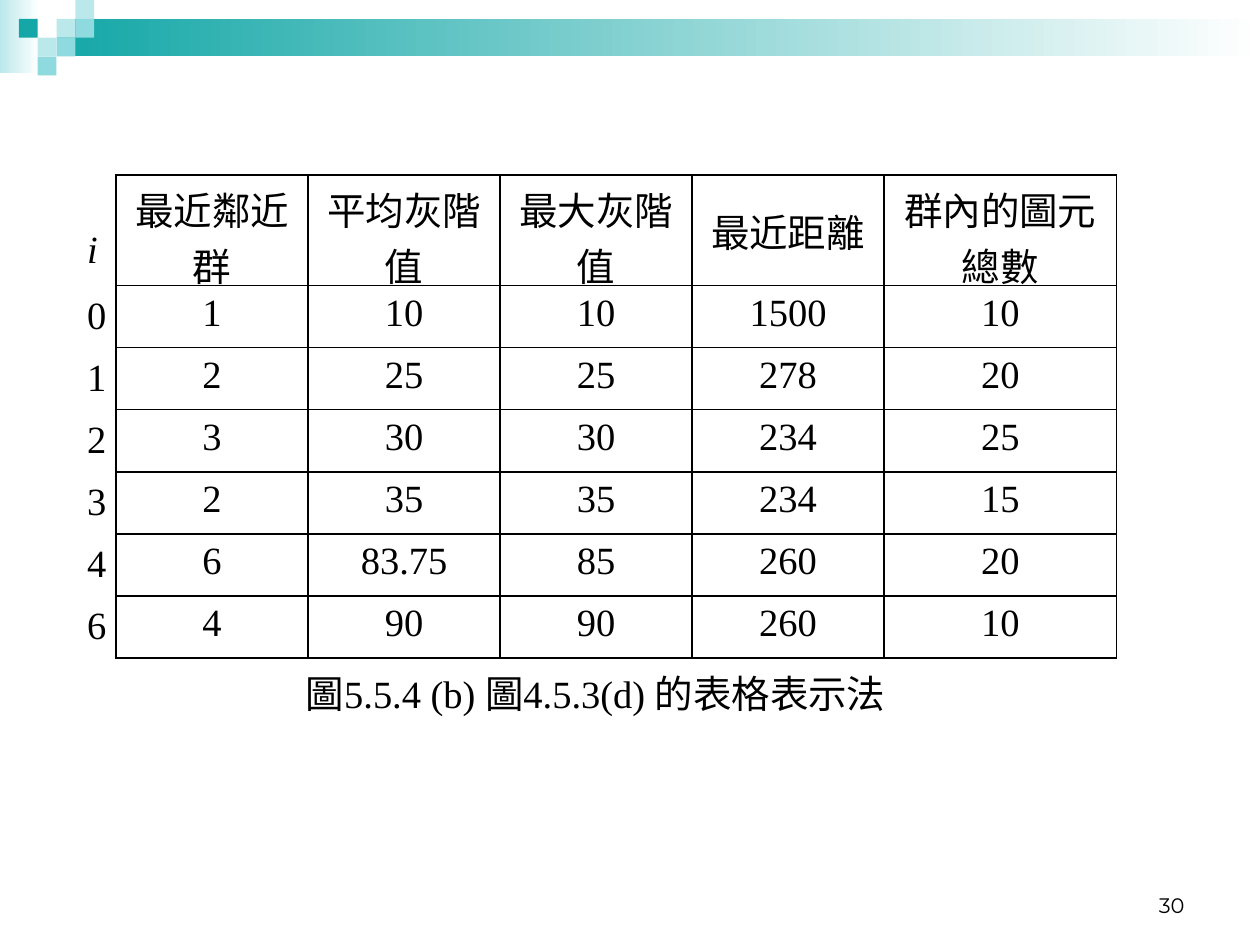
from dataclasses import dataclass

import lxml.etree
import pptx
import pptx.dml.color
import pptx.enum.shapes
import pptx.enum.text
import pptx.oxml.ns
import pptx.util

Cm = pptx.util.Cm
Pt = pptx.util.Pt
PP_ALIGN = pptx.enum.text.PP_ALIGN
ANCHOR = pptx.enum.text.MSO_ANCHOR


@dataclass(frozen=True)
class Theme:
    teal: str = "15A7A7"
    mid: str = "8EDADE"
    pale: str = "BBE8EB"
    white: str = "FFFFFF"
    ink: str = "000000"
    table_font: str = "Times New Roman"
    number_font: str = "Montserrat"
    table_size: int = 22
    number_size: int = 12
    border: float = 1


@dataclass(frozen=True)
class Band:
    left: float
    top: float
    width: float
    height: float
    start: str


@dataclass(frozen=True)
class Tile:
    col: int
    row: int
    color: str


THEME = Theme()
TILE_SIZE = 0.38
NO_GRID_STYLE = "{2D5ABB26-0587-4C30-8999-92F81FD0307C}"

BANDS = [
    Band(0, 0, 0.79, 1.47, THEME.pale),
    Band(1.14, 0.38, 24.26, 0.76, THEME.teal),
]
TILES = [
    Tile(3, 1, THEME.pale),
    Tile(4, 0, THEME.pale),
    Tile(4, 1, THEME.mid),
    Tile(2, 2, THEME.pale),
    Tile(1, 1, THEME.teal),
    Tile(3, 2, THEME.mid),
    Tile(2, 3, THEME.mid),
]

ROWS = [
    ["i", "最近鄰近群", "平均灰階值", "最大灰階值", "最近距離", "群內的圖元總數"],
    ["0", "1", "10", "10", "1500", "10"],
    ["1", "2", "25", "25", "278", "20"],
    ["2", "3", "30", "30", "234", "25"],
    ["3", "2", "35", "35", "234", "15"],
    ["4", "6", "83.75", "85", "260", "20"],
    ["6", "4", "90", "90", "260", "10"],
]
CAPTION = "圖5.5.4 (b) 圖4.5.3(d) 的表格表示法"
COL_WIDTHS = [0.84, 3.87, 3.87, 3.87, 3.87, 4.69]
HEADER_HEIGHT = 2.23
ROW_HEIGHT = 1.25


def rgb(color: str) -> pptx.dml.color.RGBColor:
    return pptx.dml.color.RGBColor.from_string(color)


def add_rect(slide, left: float, top: float, width: float, height: float):
    sp = slide.shapes.add_shape(
        pptx.enum.shapes.MSO_SHAPE.RECTANGLE, Cm(left), Cm(top), Cm(width), Cm(height)
    )
    sp.shadow.inherit = False
    sp.line.fill.background()
    return sp


def add_band(slide, band: Band) -> None:
    """Draw a bar that fades to white from left to right."""
    fill = add_rect(slide, band.left, band.top, band.width, band.height).fill
    fill.gradient()
    fill.gradient_angle = 0
    for stop, color in zip(fill.gradient_stops, (band.start, THEME.white)):
        stop.color.rgb = rgb(color)


def add_tile(slide, tile: Tile) -> None:
    left, top = tile.col * TILE_SIZE, tile.row * TILE_SIZE
    sp = add_rect(slide, left, top, TILE_SIZE, TILE_SIZE)
    sp.fill.solid()
    sp.fill.fore_color.rgb = rgb(tile.color)


def format_text(tf, font: str, size: int, align) -> None:
    for p in tf.paragraphs:
        p.alignment = align
        for r in p.runs:
            r.font.name = font
            r.font.size = Pt(size)
            r.font.color.rgb = rgb(THEME.ink)


def set_borders(tc_pr, sides: str) -> None:
    """Put lines on the given sides (letters of LRTB), ahead of the cell fill."""
    for i, side in enumerate(sides):
        ln = lxml.etree.Element(
            pptx.oxml.ns.qn(f"a:ln{side}"), w=str(Pt(THEME.border))
        )
        fill = lxml.etree.SubElement(ln, pptx.oxml.ns.qn("a:solidFill"))
        lxml.etree.SubElement(fill, pptx.oxml.ns.qn("a:srgbClr"), val=THEME.ink)
        tc_pr.insert(i, ln)


def fill_cell(cell, tc, text: str, anchor, borders: str) -> None:
    cell.text_frame.text = text
    format_text(cell.text_frame, THEME.table_font, THEME.table_size, PP_ALIGN.CENTER)
    cell.vertical_anchor = anchor
    cell.fill.background()
    set_borders(tc.find(pptx.oxml.ns.qn("a:tcPr")), borders)


def add_cluster_table(slide) -> None:
    heights = [HEADER_HEIGHT] + [ROW_HEIGHT] * len(ROWS)
    frame = slide.shapes.add_table(
        len(heights), len(COL_WIDTHS), Cm(1.5), Cm(3.53),
        Cm(sum(COL_WIDTHS)), Cm(sum(heights)),
    )
    table = frame.table
    table.first_row = table.horz_banding = False
    for style in frame.element.iter(pptx.oxml.ns.qn("a:tableStyleId")):
        style.text = NO_GRID_STYLE
    for column, width in zip(table.columns, COL_WIDTHS):
        column.width = Cm(width)
    for row, height in zip(table.rows, heights):
        row.height = Cm(height)

    tcs = list(frame.element.iter(pptx.oxml.ns.qn("a:tc")))
    for i, values in enumerate(ROWS):
        for j, text in enumerate(values):
            is_label = i == 0 or j == 0
            fill_cell(
                table.cell(i, j), tcs[i * len(COL_WIDTHS) + j], text,
                ANCHOR.MIDDLE if is_label else ANCHOR.TOP,
                "R" if j == 0 else "LRTB",
            )

    index = table.cell(0, 0)
    index.vertical_anchor = ANCHOR.BOTTOM
    index.margin_bottom = Cm(0.28)
    p = index.text_frame.paragraphs[0]
    p.alignment = PP_ALIGN.LEFT
    p.runs[0].font.italic = True

    last = len(ROWS)
    caption = table.cell(last, 0)
    caption.merge(table.cell(last, len(COL_WIDTHS) - 1))
    fill_cell(caption, tcs[last * len(COL_WIDTHS)], CAPTION, ANCHOR.MIDDLE, "")


def add_page_number(slide, text: str) -> None:
    sp = slide.shapes.add_textbox(Cm(18.21), Cm(17.35), Cm(5.92), Cm(1.27))
    tf = sp.text_frame
    tf.word_wrap = True
    tf.vertical_anchor = ANCHOR.BOTTOM
    tf.text = text
    format_text(tf, THEME.number_font, THEME.number_size, PP_ALIGN.RIGHT)


def main() -> None:
    prs = pptx.Presentation()
    prs.slide_width, prs.slide_height = Cm(25.4), Cm(19.05)
    s = prs.slides.add_slide(prs.slide_layouts[6])
    for band in BANDS:
        add_band(s, band)
    for tile in TILES:
        add_tile(s, tile)
    add_page_number(s, "30")
    add_cluster_table(s)
    prs.save("out.pptx")


if __name__ == "__main__":
    main()
